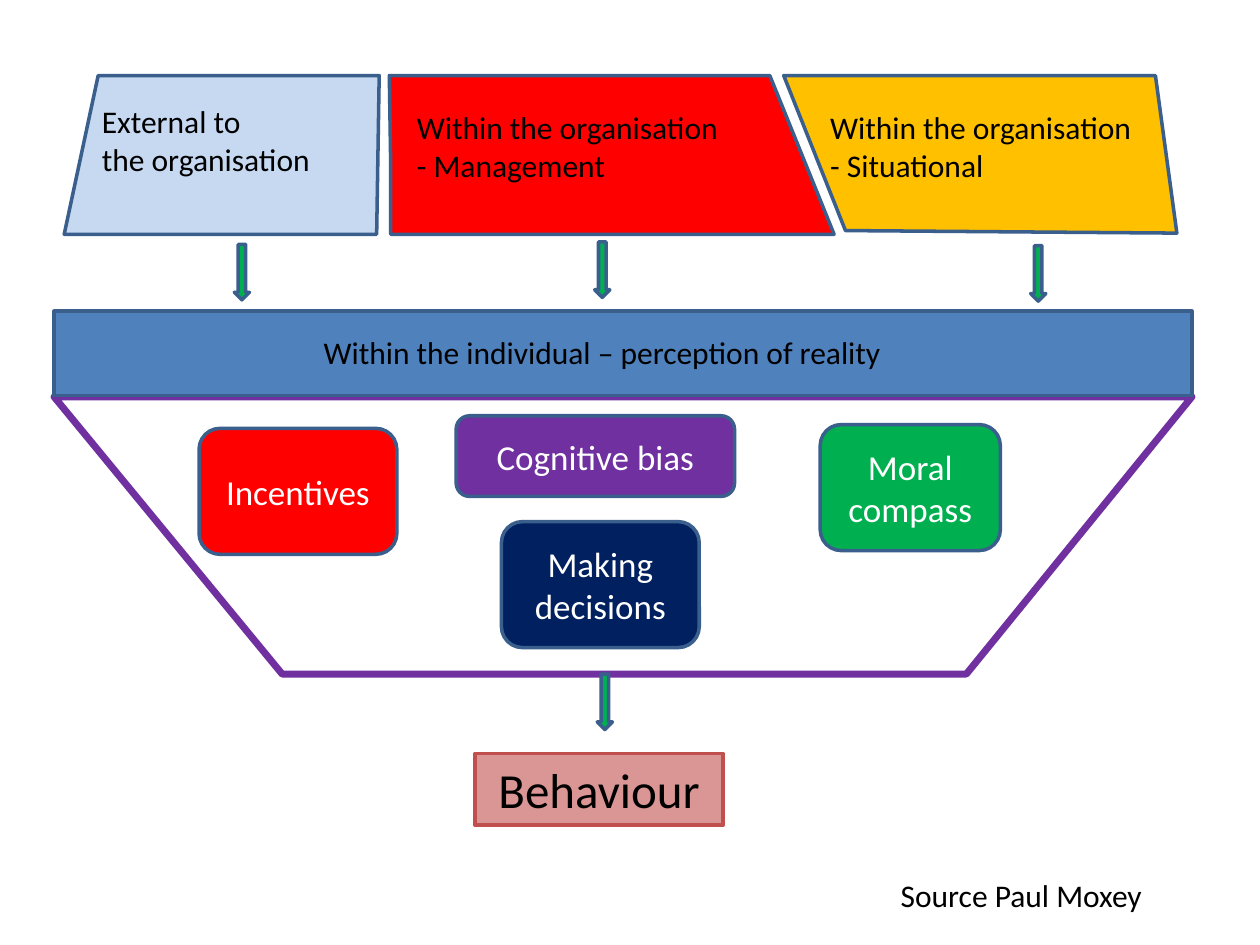
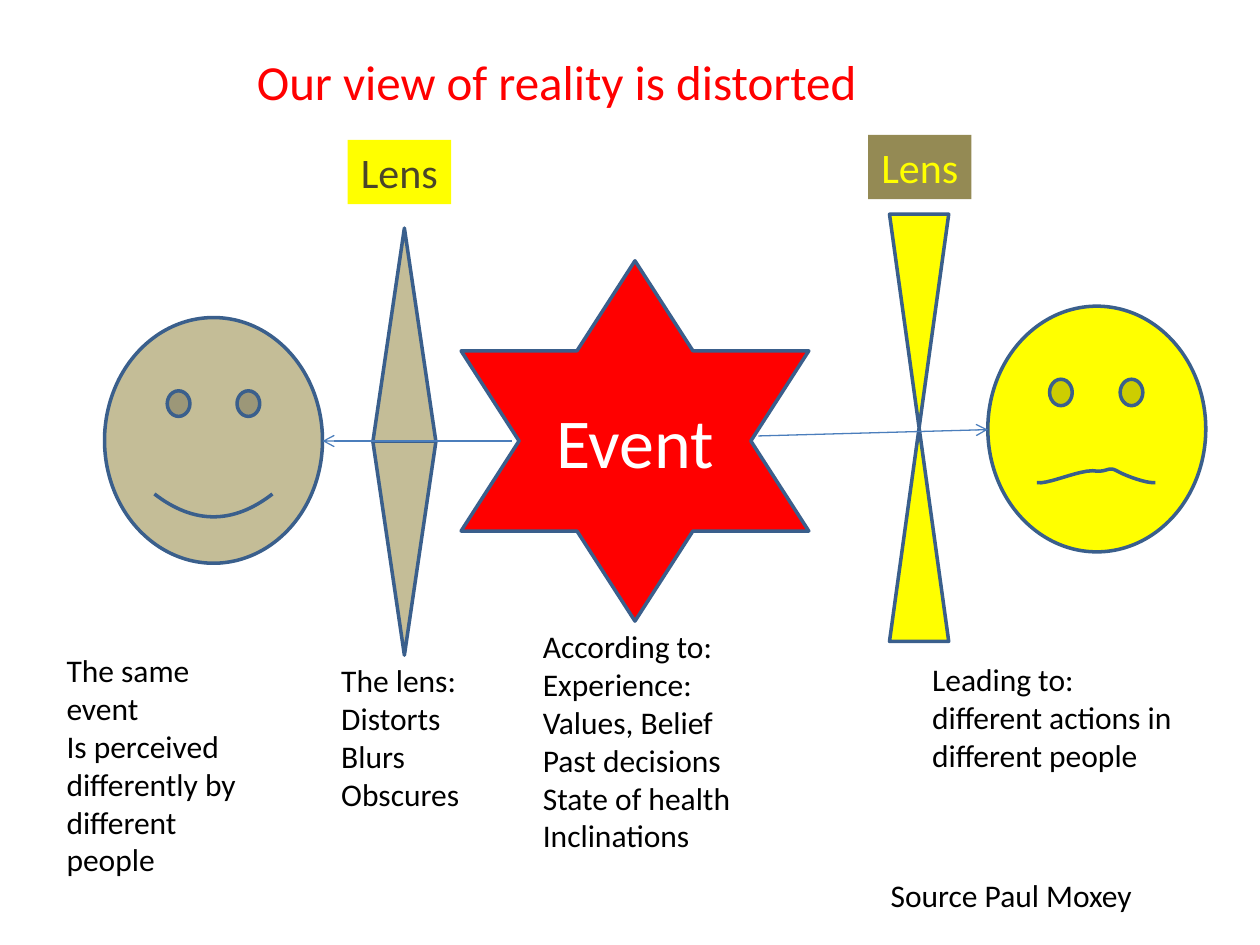
"""Build two slides on how people perceive reality and act on it."""
from dataclasses import dataclass
from functools import singledispatch
from typing import Optional

from lxml.etree import SubElement
from pptx import Presentation
from pptx.dml.color import RGBColor
from pptx.enum.shapes import MSO_CONNECTOR, MSO_SHAPE
from pptx.enum.text import MSO_ANCHOR, PP_ALIGN
from pptx.oxml.ns import qn
from pptx.shapes.autoshape import Shape
from pptx.slide import Slide
from pptx.text.text import TextFrame
from pptx.util import Inches, Pt

Point = tuple[float, float]
COLS, ROWS = 100, 75
WIDTH, HEIGHT = Inches(10), Inches(7.5)


@dataclass(frozen=True)
class Theme:
    """Colours, font, type sizes and line widths."""
    font: str = "Calibri"
    black: str = "000000"
    white: str = "FFFFFF"
    red: str = "FF0000"
    gold: str = "FFC000"
    yellow: str = "FFFF00"
    olive: str = "CDCD00"
    green: str = "00B050"
    purple: str = "7030A0"
    navy: str = "002060"
    blue: str = "4F81BD"
    pale: str = "C6D9F1"
    pink: str = "D99694"
    brick: str = "C0504D"
    tan: str = "C4BD97"
    brown: str = "948A54"
    dark: str = "4A452A"
    edge: str = "3A5F8C"
    ray: str = "4B7EBC"
    small: int = 18
    label: int = 20
    lens: int = 24
    large: int = 28
    huge: int = 40
    thin: float = 0.75
    line: float = 2
    thick: float = 4


T = Theme()


@dataclass(frozen=True)
class Block:
    """A preset shape on the grid, with optional centred text."""
    kind: MSO_SHAPE
    x: float
    y: float
    w: float
    h: float
    fill: str
    text: str = ""
    size: int = T.label
    ink: str = T.white
    edge: Optional[str] = T.edge
    wrap: bool = True


@dataclass(frozen=True)
class Path:
    """An outline through grid points."""
    points: list[Point]
    fill: Optional[str] = None
    edge: str = T.edge
    weight: float = T.line
    closed: bool = True


@dataclass(frozen=True)
class Note:
    """Plain text on the grid, one paragraph a line."""
    x: float
    y: float
    w: float
    h: float
    text: str
    size: int = T.small
    ink: str = T.black
    wrap: bool = True


@dataclass(frozen=True)
class Ray:
    """A thin arrow between two grid points."""
    start: Point
    end: Point


def col(x: float) -> int:
    """Turn grid columns into a length."""
    return round(WIDTH * x / COLS)


def row(y: float) -> int:
    """Turn grid rows into a length."""
    return round(HEIGHT * y / ROWS)


def paint(shape: Shape, fill: Optional[str], edge: Optional[str], weight: float) -> None:
    """Set fill and line, without a shadow."""
    shape.shadow.inherit = False
    if fill:
        shape.fill.solid()
        shape.fill.fore_color.rgb = RGBColor.from_string(fill)
    else:
        shape.fill.background()
    if edge:
        shape.line.color.rgb = RGBColor.from_string(edge)
        shape.line.width = Pt(weight)
    else:
        shape.line.fill.background()


def write(frame: TextFrame, item: Block | Note, align: PP_ALIGN, anchor: MSO_ANCHOR) -> None:
    """Write the text of an item in its own style."""
    frame.text = item.text
    frame.word_wrap = item.wrap
    frame.vertical_anchor = anchor
    for part in frame.paragraphs:
        part.alignment = align
        part.font.name = T.font
        part.font.size = Pt(item.size)
        part.font.color.rgb = RGBColor.from_string(item.ink)


@singledispatch
def draw(item: object, slide: Slide) -> None:
    """Draw one item on a slide."""
    raise TypeError(item)


@draw.register
def draw_block(item: Block, slide: Slide) -> None:
    """Draw a preset shape."""
    shape = slide.shapes.add_shape(item.kind, col(item.x), row(item.y), col(item.w), row(item.h))
    paint(shape, item.fill, item.edge, T.line)
    if item.text:
        write(shape.text_frame, item, PP_ALIGN.CENTER, MSO_ANCHOR.MIDDLE)


@draw.register
def draw_path(item: Path, slide: Slide) -> None:
    """Draw an outline."""
    first, *rest = [(col(x), row(y)) for x, y in item.points]
    pen = slide.shapes.build_freeform(*first)
    pen.add_line_segments(rest, close=item.closed)
    paint(pen.convert_to_shape(), item.fill, item.edge, item.weight)


@draw.register
def draw_note(item: Note, slide: Slide) -> None:
    """Draw a text box."""
    box = slide.shapes.add_textbox(col(item.x), row(item.y), col(item.w), row(item.h))
    write(box.text_frame, item, PP_ALIGN.LEFT, MSO_ANCHOR.TOP)


@draw.register
def draw_ray(item: Ray, slide: Slide) -> None:
    """Draw an arrow."""
    (x, y), (u, v) = item.start, item.end
    line = slide.shapes.add_connector(MSO_CONNECTOR.STRAIGHT, col(x), row(y), col(u), row(v))
    line.line.color.rgb = RGBColor.from_string(T.ray)
    line.line.width = Pt(T.thin)
    SubElement(line.line._get_or_add_ln(), qn("a:tailEnd"), type="arrow")
    SubElement(line._element.spPr, qn("a:effectLst"))


def bend(a: Point, b: Point, c: Point, d: Point, steps: int = 10) -> list[Point]:
    """Sample a cubic curve after its first point."""
    def mix(i: int, t: float) -> float:
        """Blend one axis of the four points."""
        s = 1 - t
        return s**3 * a[i] + 3 * s * s * t * b[i] + 3 * s * t * t * c[i] + t**3 * d[i]
    return [(mix(0, n / steps), mix(1, n / steps)) for n in range(1, steps + 1)]


def arrow(x: float, y: float) -> Block:
    """Make a small green arrow that points down."""
    return Block(MSO_SHAPE.DOWN_ARROW, x, y, 1.2, 4.4, T.green)


def card(x: float, y: float, w: float, h: float, fill: str, text: str) -> Block:
    """Make a rounded label."""
    return Block(MSO_SHAPE.ROUNDED_RECTANGLE, x, y, w, h, fill, text)


def tag(x: float, y: float, fill: str, ink: str) -> Block:
    """Make a label for a lens."""
    return Block(MSO_SHAPE.RECTANGLE, x, y, 8.2, 5.1, fill, "Lens", T.lens, ink, None, False)


def credit(x: float) -> Note:
    """Make the source line."""
    return Note(x, 69, 21.4, 4, "Source Paul Moxey", wrap=False)


def frown() -> list[Point]:
    """Trace the wavy mouth of the right face."""
    start, left, right, end = (82.3, 38.3), (87.1, 37.4), (88.7, 37.4), (91.7, 38.3)
    return [start, *bend(start, (83.2, 38.5), (86, 37.1), left),
            *bend(left, (88, 37.4), (88, 37), right),
            *bend(right, (89.4, 37.8), (91.1, 38.4), end)]


def causes() -> list:
    """List the items of the slide on behaviour."""
    return [
        Path([(62.2, 6), (91.7, 6), (93.4, 18.5), (67.1, 18.3)], T.gold),
        Path([(5.1, 18.6), (7.8, 6), (30.1, 6), (29.9, 18.6)], T.pale),
        Path([(30.9, 6), (61.1, 6), (66.2, 18.6), (31, 18.6), (31, 12.3)], T.red),
        Note(32.1, 8.1, 30.9, 7.1, "Within the organisation\n- Management"),
        Note(7.1, 7.6, 19.2, 7.9, "External to\nthe organisation"),
        Note(64.9, 8.1, 26.6, 6, "Within the organisation\n- Situational"),
        Path([(4.3, 31.5), (94.6, 31.5), (76.7, 53.5), (22.4, 53.5)],
             edge=T.purple, weight=T.thick),
        card(65.1, 33.7, 14.3, 10, T.green, "Moral compass"),
        card(15.8, 34, 15.7, 10, T.red, "Incentives"),
        card(39.8, 41.4, 15.7, 10, T.navy, "Making decisions"),
        card(36.2, 33, 22.1, 6.4, T.purple, "Cognitive bias"),
        Block(MSO_SHAPE.RECTANGLE, 4.3, 24.7, 90.3, 6.7, T.blue),
        Note(24.7, 25.9, 51.3, 7.1, "Within the individual – perception of reality"),
        *(arrow(x, y) for x, y in [(18.6, 19.4), (47.2, 19.2), (81.8, 19.5), (47.4, 53.5)]),
        Block(MSO_SHAPE.RECTANGLE, 37.7, 59.8, 19.7, 5.7, T.pink,
              "Behaviour", T.large, T.black, T.brick),
        credit(70.5),
    ]


def views() -> list:
    """List the items of the slide on distortion."""
    return [
        Block(MSO_SHAPE.SMILEY_FACE, 8.3, 25.2, 17.3, 19.5, T.tan),
        Block(MSO_SHAPE.OVAL, 78.4, 24.3, 17.3, 19.5, T.yellow),
        *(Block(MSO_SHAPE.OVAL, x, 30.1, 1.8, 2.1, T.olive) for x in (83.3, 88.9)),
        Path(frown(), closed=False),
        Block(MSO_SHAPE.STAR_6_POINT, 36.6, 20.7, 27.6, 28.6, T.red, "Event", T.huge),
        Block(MSO_SHAPE.FLOWCHART_SORT, 29.6, 18.1, 5, 33.9, T.tan),
        Block(MSO_SHAPE.FLOWCHART_COLLATE, 70.6, 17, 4.7, 33.9, T.yellow),
        tag(27.6, 11.1, T.yellow, T.dark),
        tag(68.9, 10.7, T.brown, T.yellow),
        Ray((40.6, 35), (25.6, 35)),
        Ray((60.2, 34.6), (78.4, 34.1)),
        Note(26.1, 52, 11.5, 13.1, "The lens:\nDistorts\nBlurs\nObscures", wrap=False),
        Note(42.1, 49.3, 20.5, 19.2, "According to:\nExperience:\nValues, Belief\n"
             "Past decisions\nState of health\nInclinations"),
        Note(73, 51.9, 24.3, 10.1, "Leading to:\ndifferent actions in different people"),
        Note(4.3, 51.2, 17.4, 19.2,
             "The same event\nIs perceived differently by different people"),
        Note(19.4, 3.6, 50.1, 5.7, "Our view of reality is distorted", T.large, T.red, False),
        credit(69.7),
    ]


def main() -> None:
    """Build and save the slides."""
    deck = Presentation()
    deck.slide_width, deck.slide_height = WIDTH, HEIGHT
    for items in (causes(), views()):
        slide = deck.slides.add_slide(deck.slide_layouts[6])
        for item in items:
            draw(item, slide)
    deck.save("out.pptx")


if __name__ == "__main__":
    main()
